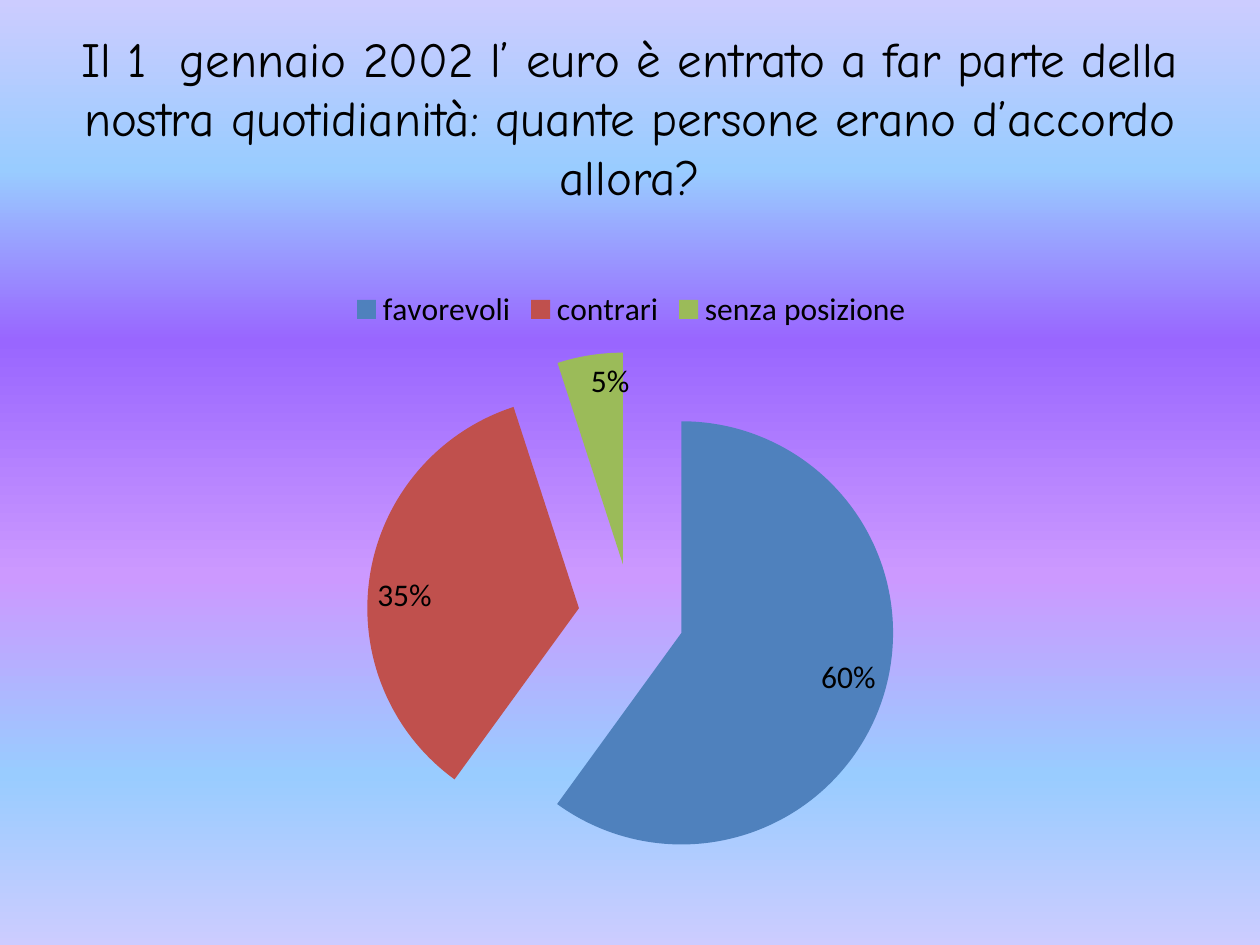
from lxml.etree import SubElement
from pptx import Presentation
from pptx.chart.data import CategoryChartData
from pptx.dml.color import RGBColor
from pptx.enum.chart import XL_CHART_TYPE, XL_LABEL_POSITION, XL_LEGEND_POSITION
from pptx.enum.text import MSO_ANCHOR, PP_ALIGN
from pptx.oxml.ns import qn
from pptx.oxml.xmlchemy import OxmlElement
from pptx.util import Pt

STOPS = [(0, "CCCCFF"), (18, "99CCFF"), (36, "9966FF"),
         (61, "CC99FF"), (82, "99CCFF"), (100, "CCCCFF")]
TITLE = ("Il 1  gennaio 2002 l’ euro è entrato a far parte della nostra "
         "quotidianità: quante persone erano d’accordo allora?")
OPINIONS = [("favorevoli", 60, "4F81BD"), ("contrari", 35, "C0504D"),
            ("senza posizione", 5, "9BBB59")]


def rgb(color):
    """Turn a hex string into a colour."""
    return RGBColor.from_string(color)


def set_font(font, name, size):
    """Set a black font of the given name and size."""
    font.name, font.size = name, Pt(size)
    font.color.rgb = rgb("000000")


def add_background(s):
    """Fill the slide with a gradient running from top to bottom."""
    fill = s.background.fill
    fill.gradient()
    fill.gradient_angle = 270
    stops = s.background._cSld.find(".//" + qn("a:gsLst"))
    for old in list(stops):
        stops.remove(old)
    for pos, color in STOPS:
        gs = SubElement(stops, qn("a:gs"), pos=str(pos * 1000))
        SubElement(gs, qn("a:srgbClr"), val=color)


def add_title(s, x, y, w, h):
    """Place the centred question in its box."""
    tf = s.shapes.add_textbox(Pt(x), Pt(y), Pt(w), Pt(h)).text_frame
    tf.word_wrap = True
    tf.vertical_anchor = MSO_ANCHOR.MIDDLE
    p = tf.paragraphs[0]
    p.text = TITLE
    p.alignment = PP_ALIGN.CENTER
    set_font(p.font, "Comic Neue", 28)


def add_pie(s, x, y, w, h):
    """Place the exploded pie of opinions with its legend on top."""
    data = CategoryChartData()
    data.categories = [name for name, _, _ in OPINIONS]
    data.add_series("Series 1", [value for _, value, _ in OPINIONS])
    chart = s.shapes.add_chart(XL_CHART_TYPE.PIE, Pt(x), Pt(y), Pt(w), Pt(h), data).chart
    chart.has_title = False
    set_font(chart.font, "Calibri", 18)
    chart.has_legend = True
    chart.legend.position = XL_LEGEND_POSITION.TOP
    chart.legend.include_in_layout = False

    plot = chart.plots[0]
    plot.vary_by_categories = True
    series = plot.series[0]
    explosion = OxmlElement("c:explosion")
    explosion.set("val", "25")
    series._element.find(qn("c:tx")).addnext(explosion)
    for i, (_, _, color) in enumerate(OPINIONS):
        fill = series.points[i].format.fill
        fill.solid()
        fill.fore_color.rgb = rgb(color)

    plot.has_data_labels = True
    labels = plot.data_labels
    labels.show_percentage = True
    labels.show_value = False
    labels.number_format = "0%"
    labels.number_format_is_linked = False
    labels.position = XL_LABEL_POSITION.INSIDE_END


def main():
    """Build the slide and save it."""
    prs = Presentation()
    prs.slide_width, prs.slide_height = Pt(720), Pt(540)
    s = prs.slides.add_slide(prs.slide_layouts[6])
    add_background(s)
    add_title(s, 36, 21.6, 648, 90)
    add_pie(s, 36.7, 157, 648, 356.4)
    prs.save("out.pptx")


if __name__ == "__main__":
    main()
